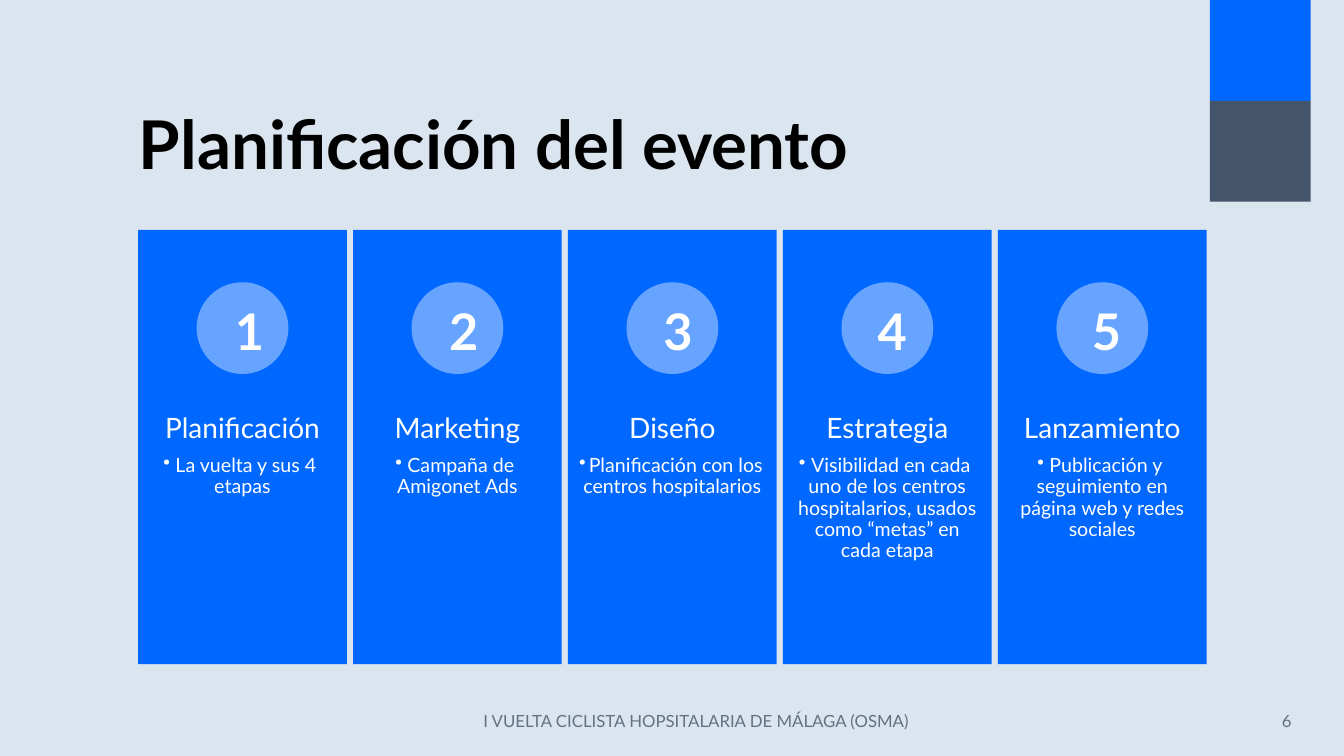
from math import cos, pi, sin

from lxml import etree
from pptx import Presentation
from pptx import util as u
from pptx.dml.color import RGBColor
from pptx.enum import shapes, text

COLORS = {
    "background": "DAE5EF",
    "blue": "0068FF",
    "slate": "44546A",
    "circle": "66A4FF",
    "title": "000000",
    "white": "FFFFFF",
    "footer": "637183",
}
STAGES = [
    ("Planificación", "La vuelta y sus 4 etapas"),
    ("Marketing", "Campaña de Amigonet Ads"),
    ("Diseño", "Planificación con los centros hospitalarios"),
    ("Estrategia", "Visibilidad en cada uno de los centros hospitalarios, "
                   "usados como “metas” en cada etapa"),
    ("Lanzamiento", "Publicación y seguimiento en página web y redes sociales"),
]
WIDTH, HEIGHT = 13.33, 7.5

deck = Presentation()
deck.slide_width, deck.slide_height = u.Inches(WIDTH), u.Inches(HEIGHT)
page = deck.slides.add_slide(deck.slide_layouts[6])
page.background.fill.solid()
page.background.fill.fore_color.rgb = RGBColor.from_string(COLORS["background"])


def paint(shape, color):
    shape.shadow.inherit = False
    shape.fill.solid()
    shape.fill.fore_color.rgb = RGBColor.from_string(COLORS[color])
    shape.line.fill.background()


def write(area, lines, color, align="CENTER", anchor="TOP", bold=None, spacing=None):
    """Add a text box; lines holds (words, size, space after) tuples."""
    box = page.shapes.add_textbox(*map(u.Inches, area))
    frame = box.text_frame
    frame.word_wrap = True
    frame.vertical_anchor = text.MSO_ANCHOR[anchor]
    for number, (words, size, after) in enumerate(lines):
        para = frame.add_paragraph() if number else frame.paragraphs[0]
        para.text = words
        para.alignment = text.PP_ALIGN[align]
        para.line_spacing = spacing
        para.space_after = u.Pt(after)
        para.font.name, para.font.size, para.font.bold = "Lato", u.Pt(size), bold
        para.font.color.rgb = RGBColor.from_string(COLORS[color])
    return frame


# Corner leaves: two opposite quarter arcs, the lower leaf mirrored
radius, leaf_width = 0.86, 1.38
angles = [step * pi / 48 for step in range(25)]
arc = [(leaf_width - radius + radius * sin(a), radius - radius * cos(a)) for a in angles]
leaf = [(0, 0)] + arc + [(leaf_width - x, radius - y) for x, y in arc]
for color, direction in (("blue", 1), ("slate", -1)):
    top = 0 if direction == 1 else 2 * radius
    points = [(WIDTH - leaf_width + x, top + direction * y) for x, y in leaf]
    outline = page.shapes.build_freeform(*points[0], scale=u.Inches(1))
    outline.add_line_segments(points[1:], close=True)
    paint(outline.convert_to_shape(), color)

# Title
write((1.28, 0.42, 10.69, 1.45), [("Planificación del evento", 48, 0)],
      "title", "LEFT", "BOTTOM", bold=True, spacing=0.9)

# Stage cards
card_left, card_top, card_width, card_height, card_pitch = 1.37, 2.28, 2.07, 4.31, 2.132
circle_size, number_left, number_pitch = 0.91, 2.23, 2.125
for index, (heading, detail) in enumerate(STAGES):
    left = card_left + index * card_pitch
    card = page.shapes.add_shape(
        shapes.MSO_SHAPE.RECTANGLE,
        *map(u.Inches, (left, card_top, card_width, card_height)))
    paint(card, "blue")

    frame = write((left, 4, card_width, 1.72), [(heading, 20, 8), (detail, 14, 2)],
                  "white", spacing=0.9)
    frame.margin_left = frame.margin_right = u.Inches(0.11)
    frame.margin_top = frame.margin_bottom = u.Inches(0.11)
    bullet = frame.paragraphs[1]._p.get_or_add_pPr()
    bullet.set("marL", "0")
    bullet.set("indent", str(u.Inches(-0.12)))
    mark = etree.Element(
        "{http://schemas.openxmlformats.org/drawingml/2006/main}buChar", char="•")
    bullet.find("{*}defRPr").addprevious(mark)

    circle = page.shapes.add_shape(
        shapes.MSO_SHAPE.OVAL,
        *map(u.Inches, (left + (card_width - circle_size) / 2, 2.8,
                        circle_size, circle_size)))
    paint(circle, "circle")
    write((number_left + index * number_pitch, 2.93, 0.38, 0.71),
          [(str(index + 1), 36, 0)], "white", bold=True)

# Footer and page number
write((4.42, 6.95, 4.97, 0.4),
      [("I VUELTA CICLISTA HOPSITALARIA DE MÁLAGA (OSMA)", 12, 0)],
      "footer", anchor="MIDDLE")
write((11.1, 6.95, 1.81, 0.4), [("6", 12, 0)], "footer", "RIGHT", "MIDDLE")

deck.save("out.pptx")
